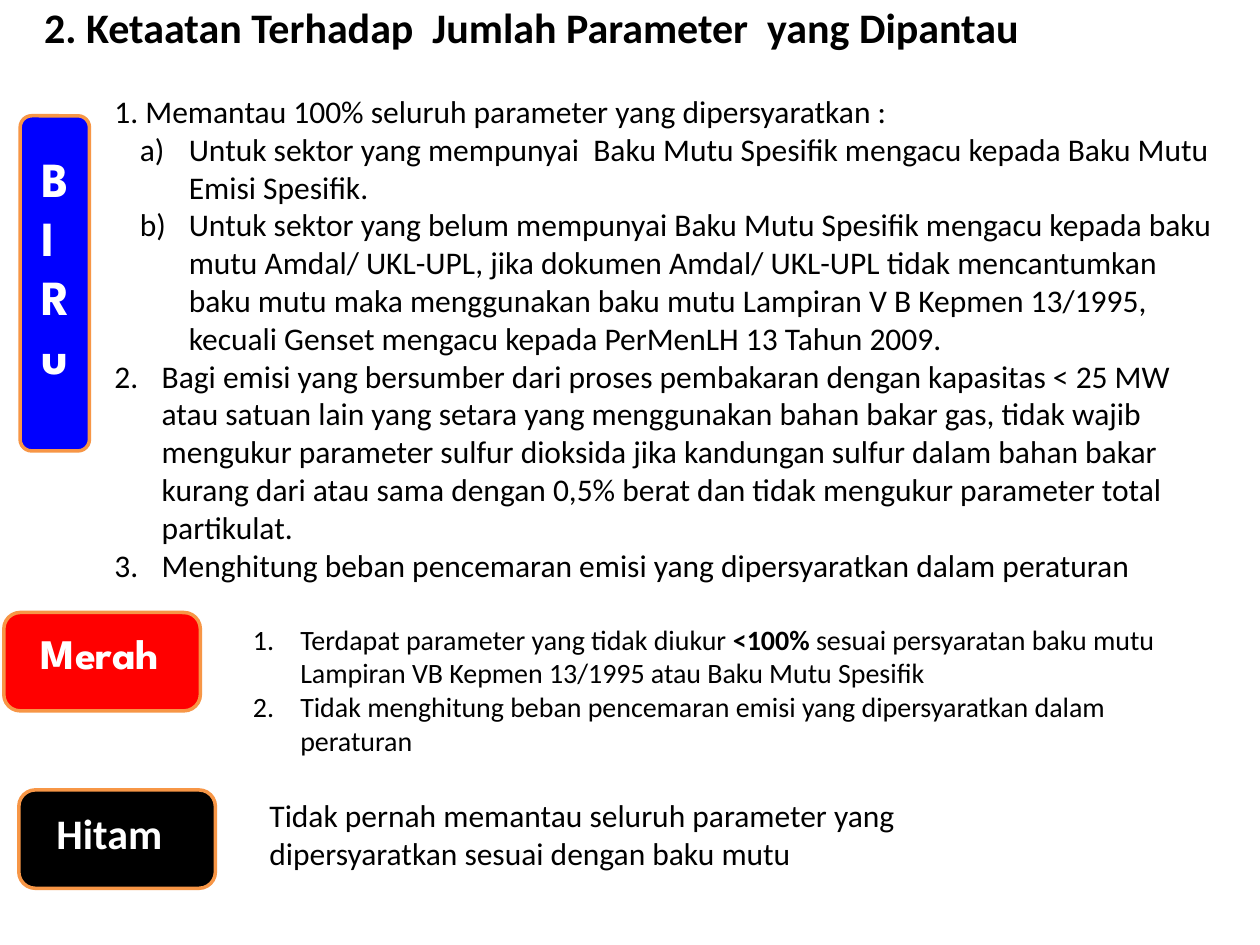
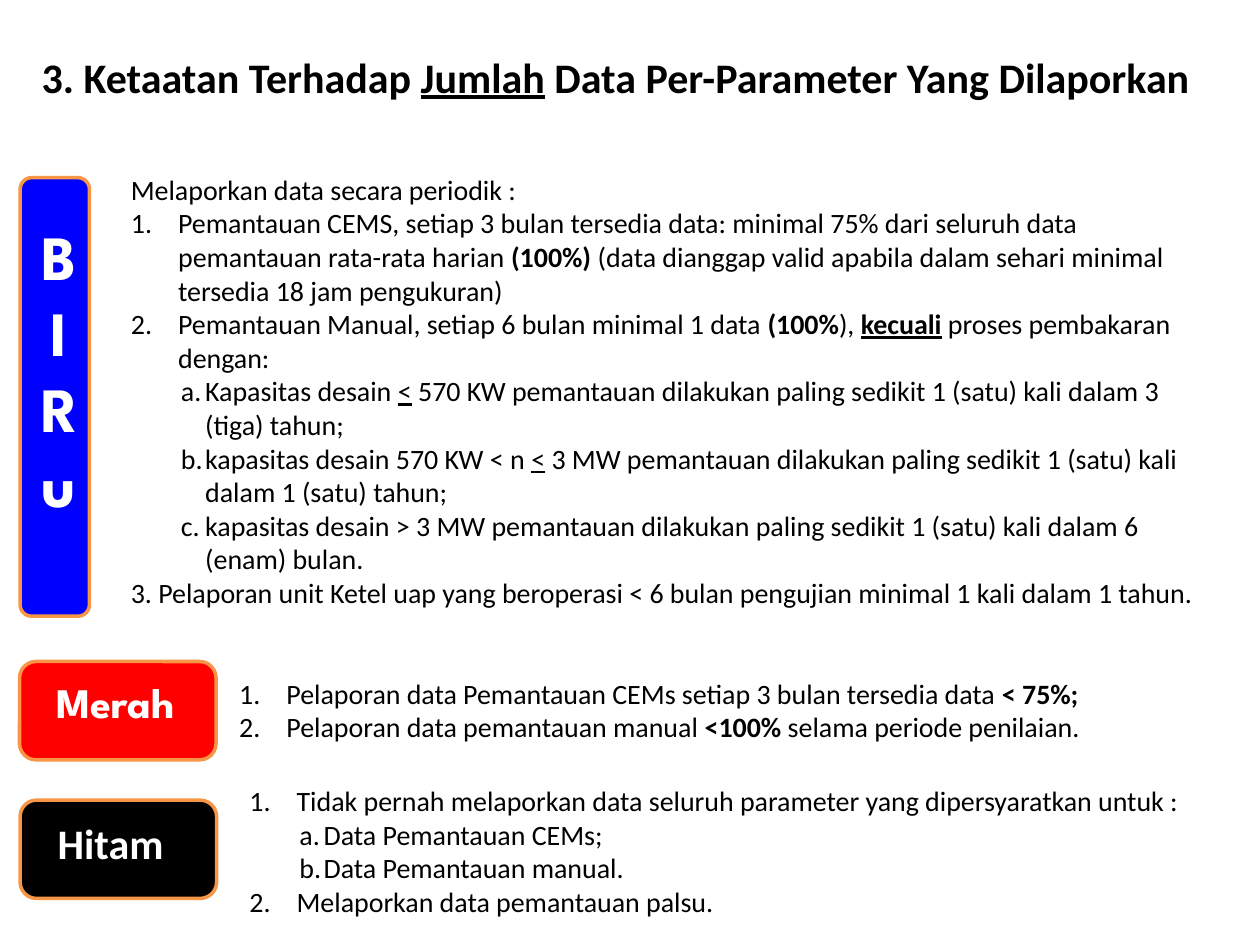
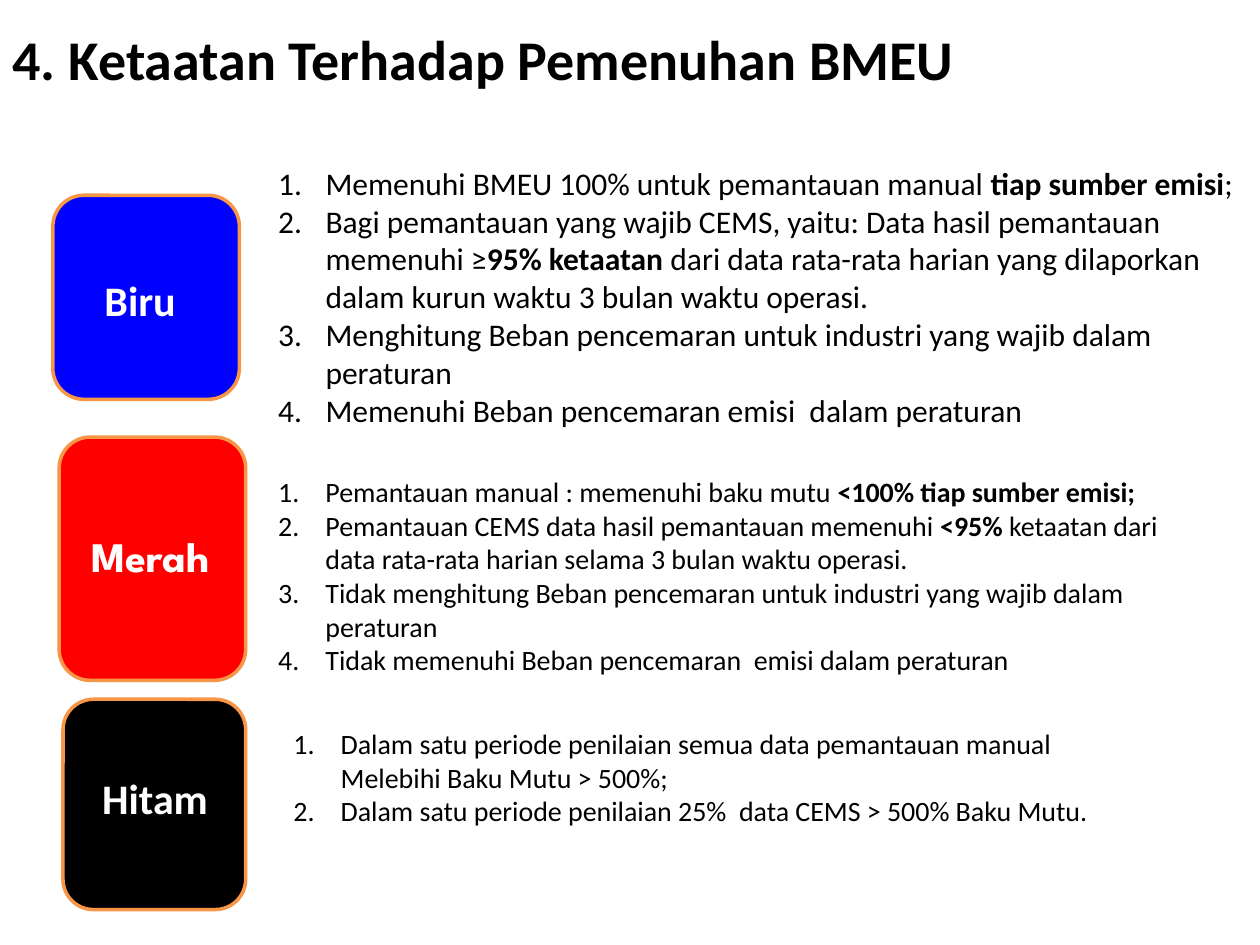
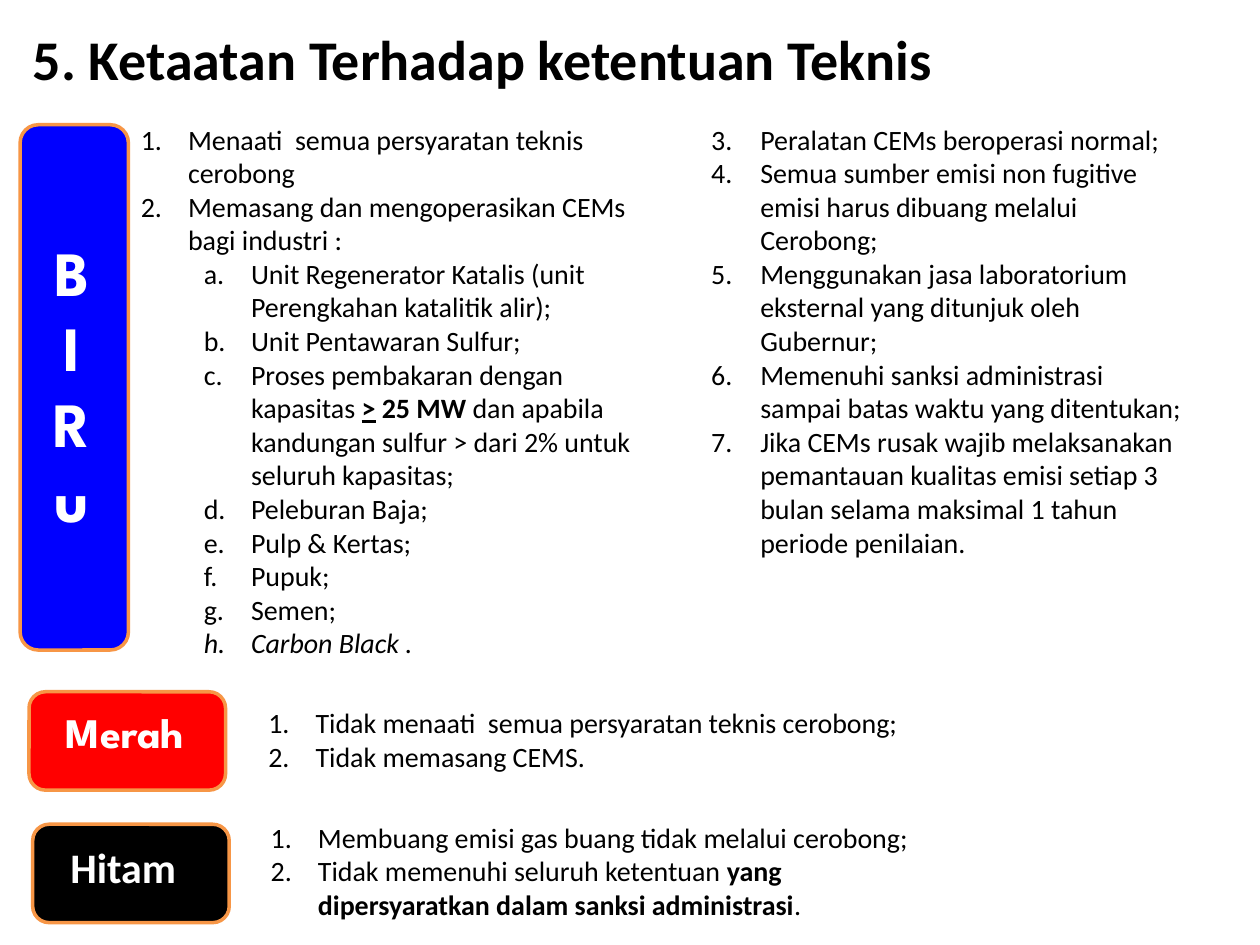
from pptx import Presentation
from pptx.dml.color import RGBColor
from pptx.enum.shapes import MSO_SHAPE as Preset
from pptx.enum.text import MSO_ANCHOR as Anchor, MSO_AUTO_SIZE as AutoSize, PP_ALIGN as Align
from pptx.oxml.ns import qn
from pptx.util import Pt
from lxml.etree import SubElement

COLORS = {"blue": "0000FF", "red": "FF0000", "black": "000000",
          "white": "FFFFFF", "orange": "F79646"}
BODY_FONT = "Calibri"
LABEL_FONT = "League Spartan"
TITLE_ONLY = 5

# Left margin, first-line indent, numbering scheme, outline level
LISTS = {
    "plain": (0, 0, None, 0),
    "number": (27, -27, "arabicPeriod", 0),
    "paren": (42.5, -28, "alphaLcParenR", 0),
    "letter": (42.5, -13.9, "alphaLcPeriod", 0),
    "sub": (63, -27, "alphaLcPeriod", 1),
    "column": (56.2, -28.1, "arabicPeriod", 0),
}

# Fill, font and alignment of each rating label
RATINGS = {
    "Biru": ("blue", BODY_FONT, Align.LEFT),
    "Merah": ("red", LABEL_FONT, Align.CENTER),
    "Hitam": ("black", BODY_FONT, Align.LEFT),
}
BADGE_SIZE = (112.3, 56.2)
# Label box inside a badge: left and top offset, width, height
BADGE_LABELS = {"Merah": (6.6, 5, 96.5, 33), "Hitam": (14.4, 6.6, 80, 36)}


def color(name):
    return RGBColor.from_string(COLORS[name])


def points(box):
    return [Pt(value) for value in box]


def item(*runs, kind="number", start=None):
    """A paragraph; each run is a string or (string, flags from "b", "u", "i")."""
    return runs, kind, start


def lines(*texts):
    return [item(text, kind="plain") for text in texts]


def number_paragraph(paragraph, kind, start):
    margin, indent, scheme, level = LISTS[kind]
    paragraph.level = level
    if scheme is None:
        return
    properties = paragraph._p.get_or_add_pPr()
    properties.set("marL", str(int(Pt(margin))))
    properties.set("indent", str(int(Pt(indent))))
    SubElement(properties, qn("a:buFont"), typeface="+mj-lt")
    numbering = SubElement(properties, qn("a:buAutoNum"), type=scheme)
    if start:
        numbering.set("startAt", str(start))


def write_text(frame, items, size=16, font=BODY_FONT, ink="black", bold=False,
               align=Align.LEFT):
    for index, (runs, kind, start) in enumerate(items):
        paragraph = frame.add_paragraph() if index else frame.paragraphs[0]
        paragraph.alignment = align
        number_paragraph(paragraph, kind, start)
        for entry in runs:
            text, flags = (entry, "") if isinstance(entry, str) else entry
            run = paragraph.add_run()
            run.text = text
            run.font.size = Pt(size)
            run.font.name = font
            run.font.color.rgb = color(ink)
            run.font.bold = bold or "b" in flags
            run.font.underline = "u" in flags
            run.font.italic = "i" in flags


def add_text(shapes, box, items, columns=1, **style):
    shape = shapes.add_textbox(*points(box))
    frame = shape.text_frame
    frame.word_wrap = True
    frame.auto_size = AutoSize.SHAPE_TO_FIT_TEXT
    if columns > 1:
        frame._txBody.bodyPr.set("numCol", str(columns))
    write_text(frame, items, **style)


def add_title(slide, box, *runs, size):
    title = slide.shapes.title
    title.left, title.top, title.width, title.height = points(box)
    frame = title.text_frame
    frame.auto_size = AutoSize.NONE
    frame.vertical_anchor = Anchor.MIDDLE
    write_text(frame, [item(*runs, kind="plain")], size=size, bold=True)


def add_rating(slide, name, box, label_box, items=None, **style):
    """A rounded block with its label, grouped."""
    fill, font, align = RATINGS[name]
    shapes = slide.shapes.add_group_shape().shapes
    block = shapes.add_shape(Preset.ROUNDED_RECTANGLE, *points(box))
    block.shadow.inherit = False
    block.fill.solid()
    block.fill.fore_color.rgb = color(fill)
    block.line.color.rgb = color("orange")
    block.line.width = Pt(2)
    style = {"size": 24, "font": font, "align": align, **style}
    add_text(shapes, label_box, items or lines(name), ink="white", bold=True, **style)


def add_badge(slide, name, left, top):
    offset_left, offset_top, width, height = BADGE_LABELS[name]
    add_rating(slide, name, (left, top, *BADGE_SIZE),
               (left + offset_left, top + offset_top, width, height))


def add_upright_blue(slide, box, label_box, size=36, align=Align.CENTER):
    add_rating(slide, "Biru", box, label_box, lines(*"BIRu"),
               size=size, font=LABEL_FONT, align=align)


def build_parameter_count(slide):
    add_title(slide, (18, -7.9, 703.4, 46),
              "2. Ketaatan Terhadap  Jumlah Parameter  yang Dipantau", size=24)
    add_upright_blue(slide, (11.5, 66.2, 39.6, 191.5), (16.6, 81.4, 33.8, 143.3),
                     size=28, align=Align.LEFT)
    add_badge(slide, "Merah", 2.2, 350)
    add_badge(slide, "Hitam", 10.8, 451.4)
    add_text(slide.shapes, (58.3, 49, 646.6, 290.9), [
        item("1. Memantau 100% seluruh parameter yang dipersyaratkan :", kind="plain"),
        item("Untuk sektor yang mempunyai  Baku Mutu Spesifik mengacu kepada Baku Mutu "
             "Emisi Spesifik.", kind="paren"),
        item("Untuk sektor yang belum mempunyai Baku Mutu Spesifik mengacu kepada baku "
             "mutu Amdal/ UKL-UPL, jika dokumen Amdal/ UKL-UPL tidak mencantumkan baku "
             "mutu maka menggunakan baku mutu Lampiran V B Kepmen 13/1995, kecuali "
             "Genset mengacu kepada PerMenLH 13 Tahun 2009.", kind="paren"),
        item("Bagi emisi yang bersumber dari proses pembakaran dengan kapasitas < 25 MW "
             "atau satuan lain yang setara yang menggunakan bahan bakar gas, tidak wajib "
             "mengukur parameter sulfur dioksida jika kandungan sulfur dalam bahan bakar "
             "kurang dari atau sama dengan 0,5% berat dan tidak mengukur parameter total "
             "partikulat.", start=2),
        item("Menghitung beban pencemaran emisi yang dipersyaratkan dalam peraturan",
             start=2),
    ], size=18)
    add_text(slide.shapes, (137.5, 352.1, 551.5, 85), [
        item("Terdapat parameter yang tidak diukur ", ("<100% ", "b"),
             "sesuai persyaratan baku mutu  Lampiran VB Kepmen 13/1995 atau Baku Mutu "
             "Spesifik"),
        item("Tidak menghitung beban pencemaran emisi yang dipersyaratkan dalam peraturan"),
    ])
    add_text(slide.shapes, (146.9, 451.4, 444.2, 51.1), lines(
        "Tidak pernah memantau seluruh parameter yang dipersyaratkan sesuai dengan baku "
        "mutu"), size=18)


def build_data_count(slide):
    add_title(slide, (16.6, 13.7, 703.4, 59.8), "3. Ketaatan Terhadap ", ("Jumlah", "u"),
              " Data Per-Parameter Yang Dilaporkan", size=24)
    add_upright_blue(slide, (11.5, 101.5, 39.6, 250.6), (16.6, 121, 33.8, 197.3))
    add_badge(slide, "Merah", 11.2, 378)
    add_badge(slide, "Hitam", 11.5, 457.2)
    add_text(slide.shapes, (67.7, 95, 630, 278.6), [
        item("Melaporkan data secara periodik :", kind="plain"),
        item("Pemantauan CEMS, setiap 3 bulan tersedia data: minimal 75% dari seluruh "
             "data pemantauan rata-rata harian ", ("(100%) ", "b"),
             "(data dianggap valid apabila dalam sehari minimal tersedia 18 jam "
             "pengukuran)"),
        item("Pemantauan Manual, setiap 6 bulan minimal 1 data ", ("(100%", "b"), "), ",
             ("kecuali", "bu"), " proses pembakaran dengan:"),
        item("Kapasitas desain ", ("<", "u"),
             " 570 KW pemantauan dilakukan paling sedikit 1 (satu) kali dalam 3 (tiga) "
             "tahun;", kind="letter"),
        item("kapasitas desain 570 KW < n ", ("<", "u"),
             " 3 MW pemantauan dilakukan paling sedikit 1 (satu) kali dalam 1 (satu) "
             "tahun;", kind="letter"),
        item("kapasitas desain > 3 MW pemantauan dilakukan paling sedikit 1 (satu) kali "
             "dalam 6 (enam) bulan.", kind="letter"),
        item("3. Pelaporan unit Ketel uap yang beroperasi < 6 bulan pengujian minimal 1 "
             "kali dalam 1 tahun.", kind="plain"),
    ])
    add_text(slide.shapes, (129.6, 383, 547.9, 46), [
        item("Pelaporan data Pemantauan CEMs setiap 3 bulan tersedia data ",
             ("< 75%;", "b")),
        item("Pelaporan data pemantauan manual ", ("<100% ", "b"),
             "selama periode penilaian."),
    ])
    add_text(slide.shapes, (135.4, 444.2, 584.6, 85), [
        item("Tidak pernah melaporkan data seluruh parameter yang dipersyaratkan untuk :"),
        item("Data Pemantauan CEMs;", kind="letter"),
        item("Data Pemantauan manual.", kind="letter"),
        item("Melaporkan data pemantauan palsu.", start=2),
    ])


def build_standard_compliance(slide):
    add_title(slide, (0, 0, 684.7, 66.2), "4. Ketaatan Terhadap Pemenuhan BMEU", size=32)
    add_rating(slide, "Biru", (30.2, 111.6, 106.6, 116.6), (52.6, 153.4, 58.3, 54))
    add_rating(slide, "Merah", (33.8, 249.8, 106.6, 139), (40.3, 299.5, 91.4, 29.5))
    add_rating(slide, "Hitam", (36, 399.6, 104.4, 120.2), (41.8, 437.8, 93.6, 55.4),
               align=Align.CENTER)
    add_text(slide.shapes, (151.9, 90, 568.1, 159.8), [
        item("Memenuhi BMEU 100% untuk pemantauan manual ", ("tiap sumber emisi", "b"),
             ";"),
        item("Bagi pemantauan yang wajib CEMS, yaitu: Data hasil pemantauan memenuhi ≥",
             ("95% ketaatan ", "b"),
             "dari data rata-rata harian yang dilaporkan dalam kurun waktu 3 bulan waktu "
             "operasi."),
        item("Menghitung Beban pencemaran untuk industri yang wajib dalam peraturan"),
        item("Memenuhi Beban pencemaran emisi  dalam peraturan"),
    ], size=18)
    add_text(slide.shapes, (151.9, 267.8, 532.8, 143.3), [
        item("Pemantauan manual : memenuhi baku mutu ", ("<100% tiap sumber emisi;", "b")),
        item("Pemantauan CEMS data hasil pemantauan memenuhi ", ("<95%", "b"),
             " ketaatan dari data rata-rata harian selama 3 bulan waktu operasi."),
        item("Tidak menghitung Beban pencemaran untuk industri yang wajib dalam peraturan"),
        item("Tidak memenuhi Beban pencemaran  emisi dalam peraturan"),
    ])
    add_text(slide.shapes, (160.6, 411.8, 472.3, 65.5), [
        item("Dalam satu periode penilaian semua data pemantauan manual Melebihi Baku "
             "Mutu > 500%;"),
        item("Dalam satu periode penilaian 25%  data CEMS > 500% Baku Mutu."),
    ])


def build_technical_terms(slide):
    add_title(slide, (11.5, 0, 642.2, 66.2), "5. Ketaatan Terhadap ketentuan Teknis",
              size=32)
    add_upright_blue(slide, (11.5, 71.3, 61.9, 300.2), (14.4, 129.6, 53.3, 236.9))
    add_badge(slide, "Merah", 16.6, 395.3)
    add_badge(slide, "Hitam", 18.7, 471)
    industries_after = ("Peleburan Baja;", "Pulp & Kertas;", "Pupuk;", "Semen;",
                        ("Carbon Black .", "i"))
    further_duties = (
        "Peralatan CEMs beroperasi normal;",
        "Semua sumber emisi non fugitive emisi harus dibuang melalui Cerobong;",
        "Menggunakan jasa laboratorium eksternal yang ditunjuk oleh Gubernur;",
        "Memenuhi sanksi administrasi sampai batas waktu yang ditentukan;",
        "Jika CEMs rusak wajib melaksanakan pemantauan kualitas emisi setiap 3 bulan "
        "selama maksimal 1 tahun periode penilaian.",
    )
    add_text(slide.shapes, (73.4, 66.2, 609.8, 317.5), [
        item("Menaati  semua persyaratan teknis cerobong"),
        item("Memasang dan mengoperasikan CEMs bagi industri :"),
        item("Unit Regenerator Katalis (unit Perengkahan katalitik alir);", kind="sub"),
        item("Unit Pentawaran Sulfur;", kind="sub"),
        item("Proses pembakaran dengan kapasitas ", (">", "bu"), (" 25 MW ", "b"),
             "dan apabila kandungan sulfur > dari 2% untuk seluruh kapasitas;",
             kind="sub"),
        *[item(industry, kind="sub") for industry in industries_after],
        *[item(duty, kind="column") for duty in further_duties],
    ], columns=2)
    add_text(slide.shapes, (146.2, 399.6, 433.4, 46), [
        item("Tidak menaati  semua persyaratan teknis cerobong;"),
        item("Tidak memasang CEMS."),
    ])
    add_text(slide.shapes, (147.6, 465.1, 404.6, 65.5), [
        item("Membuang emisi gas buang tidak melalui cerobong;"),
        item("Tidak memenuhi seluruh ketentuan ",
             ("yang dipersyaratkan dalam sanksi administrasi", "b"), "."),
    ])


def main():
    presentation = Presentation()
    presentation.slide_width, presentation.slide_height = Pt(720), Pt(540)
    layout = presentation.slide_layouts[TITLE_ONLY]
    for build in (build_parameter_count, build_data_count,
                  build_standard_compliance, build_technical_terms):
        build(presentation.slides.add_slide(layout))
    presentation.save("out.pptx")


if __name__ == "__main__":
    main()
